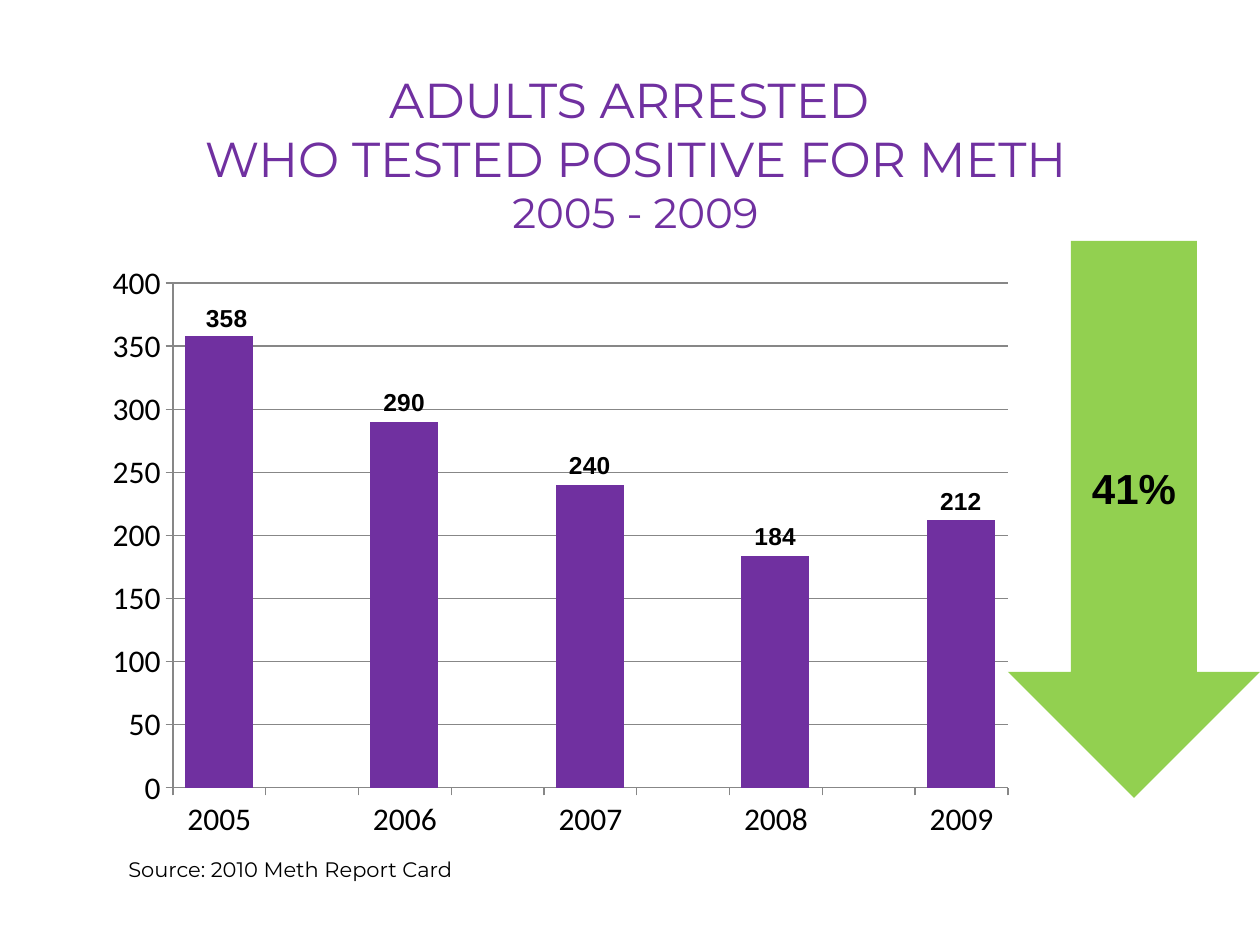
"""Build a slide charting adults arrested who tested positive for meth."""
from lxml import etree
from pptx import Presentation
from pptx.chart.data import CategoryChartData
from pptx.dml.color import RGBColor
from pptx.enum.chart import XL_CHART_TYPE, XL_LABEL_POSITION, XL_TICK_MARK
from pptx.enum.shapes import MSO_SHAPE
from pptx.enum.text import MSO_ANCHOR, PP_ALIGN
from pptx.oxml.ns import qn
from pptx.util import Inches, Pt

COLUMN = XL_CHART_TYPE.COLUMN_CLUSTERED
OUTSIDE_END = XL_LABEL_POSITION.OUTSIDE_END
OUTSIDE = XL_TICK_MARK.OUTSIDE
DOWN_ARROW = MSO_SHAPE.DOWN_ARROW
TOP, MIDDLE = MSO_ANCHOR.TOP, MSO_ANCHOR.MIDDLE
LEFT, CENTER = PP_ALIGN.LEFT, PP_ALIGN.CENTER

PURPLE = RGBColor(0x70, 0x30, 0xA0)
RED = RGBColor(0xFF, 0, 0)
OLIVE = RGBColor(0x9B, 0xBB, 0x59)
GREEN = RGBColor(0x92, 0xD0, 0x50)
GRAY = RGBColor(0x87, 0x87, 0x87)
BLACK = RGBColor(0, 0, 0)

TITLE = [("ADULTS ARRESTED ", 28), ("WHO TESTED POSITIVE FOR METH", 28), ("2005 - 2009", 24)]
SOURCE = [("Source: 2010 Meth Report Card", 12)]
DROP = [("41%", 24)]
CATEGORIES = ["2005", "", "2006", "", "2007", "", "2008", "", "2009"]
POSITIVE_TESTS = [358, None, 290, None, 240, None, 184, None, 212]
NO_VALUES = [None] * len(CATEGORIES)
SERIES = [
    ("Series 1", POSITIVE_TESTS, PURPLE),
    ("Series 2", NO_VALUES, RED),
    ("Series 3", NO_VALUES, OLIVE),
]

SLIDE_SIZE = (1260, 945)
TITLE_BOX = (105, 63, 1061, 183)
SOURCE_BOX = (116, 850, 403, 38)
CHART_BOX = (94, 252, 933, 598)
PLOT_BOX = (173, 283, 835, 505)
ARROW_BOX = (1008, 241, 252, 557)
FIRST_LABEL_SHIFT = (8, 2)


def px(*lengths):
    return [Inches(length / 126) for length in lengths]


def write(shape, lines, font_name, color, alignment=CENTER, bold=False, anchor=TOP, wrap=True):
    frame = shape.text_frame
    frame.word_wrap = wrap
    frame.vertical_anchor = anchor
    frame.text = "\n".join(text for text, size in lines)
    for paragraph, (text, size) in zip(frame.paragraphs, lines):
        paragraph.alignment = alignment
        font = paragraph.runs[0].font
        font.name, font.size, font.bold = font_name, Pt(size), bold
        font.color.rgb = color


def set_layout(parent, index, settings):
    for layout in parent.findall(qn("c:layout")):
        parent.remove(layout)
    layout = etree.Element(qn("c:layout"))
    manual = etree.SubElement(layout, qn("c:manualLayout"))
    for name, value in settings.items():
        etree.SubElement(manual, qn("c:" + name)).set("val", str(value))
    parent.insert(index, layout)


def place_parts(chart):
    left, top, width, height = PLOT_BOX
    chart_left, chart_top, chart_width, chart_height = CHART_BOX
    set_layout(chart.element.find(".//" + qn("c:plotArea")), 0, {
        "layoutTarget": "inner", "xMode": "edge", "yMode": "edge",
        "x": (left - chart_left) / chart_width,
        "y": (top - chart_top) / chart_height,
        "w": width / chart_width,
        "h": height / chart_height,
    })
    shift_x, shift_y = FIRST_LABEL_SHIFT
    set_layout(chart.element.find(".//" + qn("c:dLbl")), 1, {
        "x": shift_x / chart_width, "y": shift_y / chart_height,
    })


def style_label(label):
    label.position = OUTSIDE_END
    label.font.name, label.font.size, label.font.bold = "Arial", Pt(14), True
    label.font.color.rgb = BLACK


def add_tests_chart(slide):
    data = CategoryChartData()
    data.categories = CATEGORIES
    for name, values, color in SERIES:
        data.add_series(name, values)
    chart = slide.shapes.add_chart(COLUMN, *px(*CHART_BOX), data).chart
    chart.has_legend = chart.has_title = False
    chart.font.name, chart.font.size = "Calibri", Pt(18)
    chart.font.color.rgb = BLACK
    value_axis = chart.value_axis
    value_axis.minimum_scale, value_axis.maximum_scale = 0, 400
    value_axis.major_unit = 50
    for axis in (chart.category_axis, value_axis):
        axis.major_tick_mark = OUTSIDE
    for part in (chart.category_axis, value_axis, value_axis.major_gridlines):
        part.format.line.color.rgb = GRAY
        part.format.line.width = Pt(0.75)

    plot = chart.plots[0]
    plot.gap_width, plot.overlap, plot.vary_by_categories = 34, 99, False
    for series, (name, values, color) in zip(plot.series, SERIES):
        series.format.fill.solid()
        series.format.fill.fore_color.rgb = color
    tests = plot.series[0]
    tests.data_labels.show_value = True
    style_label(tests.data_labels)
    style_label(tests.points[0].data_label)
    place_parts(chart)


def main():
    presentation = Presentation()
    presentation.slide_width, presentation.slide_height = px(*SLIDE_SIZE)
    slide = presentation.slides.add_slide(presentation.slide_layouts[6])
    add_tests_chart(slide)
    title = slide.shapes.add_textbox(*px(*TITLE_BOX))
    write(title, TITLE, "Montserrat", PURPLE)
    source = slide.shapes.add_textbox(*px(*SOURCE_BOX))
    write(source, SOURCE, "Montserrat", BLACK, LEFT, wrap=False)
    arrow = slide.shapes.add_shape(DOWN_ARROW, *px(*ARROW_BOX))
    arrow.shadow.inherit = False
    arrow.fill.solid()
    arrow.fill.fore_color.rgb = GREEN
    arrow.line.fill.background()
    write(arrow, DROP, "Arial", BLACK, bold=True, anchor=MIDDLE)
    presentation.save("out.pptx")


if __name__ == "__main__":
    main()
